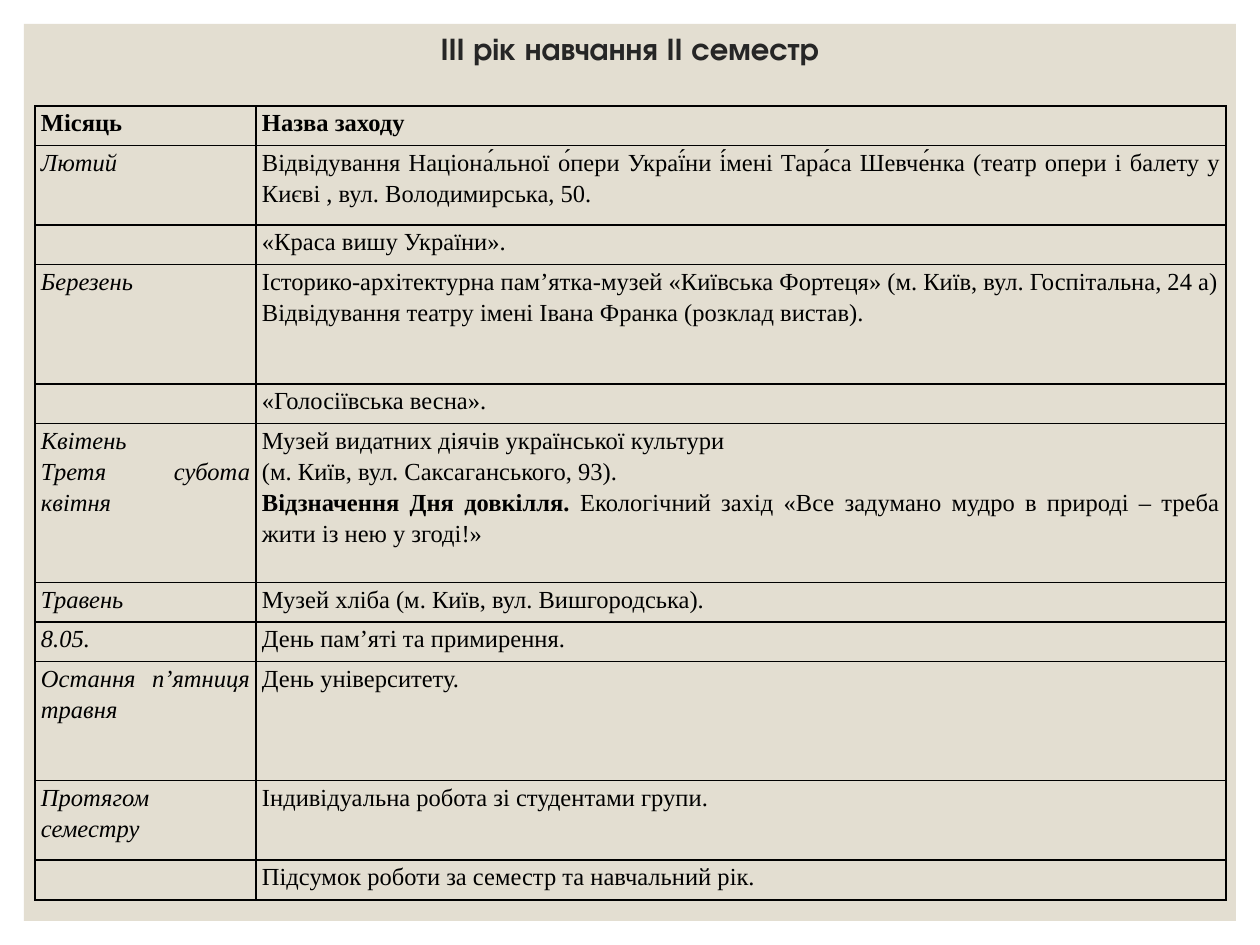
from lxml.etree import fromstring
from pptx import Presentation
from pptx.dml.color import RGBColor as Rgb
from pptx.enum.shapes import MSO_SHAPE as Shape
from pptx.enum.text import MSO_ANCHOR as Anchor, PP_ALIGN as Align
from pptx.util import Pt

SCALE = 914400 / 126
COLORS = {"panel": "E3DED1", "title": "262626", "ink": "000000"}
FONTS = {"title": "TeX Gyre Adventor", "body": "Times New Roman"}
NS = "http://schemas.openxmlformats.org/drawingml/2006/main"
LEAD = "Відзначення Дня довкілля. "

# Height in lines, month paragraphs, event paragraphs
ROWS = [
    (1, ["Місяць"], ["Назва заходу"]),
    (2, ["Лютий"], ["Відвідування Націона́льної о́пери Украї́ни і́мені Тара́са Шевче́нка "
                    "(театр опери і балету у Києві , вул. Володимирська, 50."]),
    (1, [], ["«Краса вишу України»."]),
    (3, ["Березень"], ["Історико-архітектурна пам’ятка-музей «Київська Фортеця» "
                       "(м. Київ, вул. Госпітальна, 24 а)",
                       "Відвідування театру імені Івана Франка (розклад вистав)."]),
    (1, [], ["«Голосіївська весна»."]),
    (4, ["Квітень", "Третя субота квітня"],
     ["Музей видатних діячів української культури",
      "(м. Київ, вул. Саксаганського, 93).",
      LEAD + "Екологічний захід «Все задумано мудро в природі – "
      "треба жити із нею у згоді!»"]),
    (1, ["Травень"], ["Музей хліба (м. Київ, вул. Вишгородська)."]),
    (1, ["8.05."], ["День пам’яті та примирення."]),
    (3, ["Остання п’ятниця травня"], ["День університету."]),
    (2, ["Протягом семестру"], ["Індивідуальна робота зі студентами групи."]),
    (1, [], ["Підсумок роботи за семестр та навчальний рік."]),
]


def px(n):
    return round(n * SCALE)


def box(*dims):
    return [px(n) for n in dims]


def assign(obj, vals):
    for key, val in vals.items():
        setattr(obj, key, val)


def add_run(para, text, face, size, color, **style):
    run = para.add_run()
    run.text = text
    assign(run.font, {"name": FONTS[face], "size": Pt(size), **style})
    run.font.color.rgb = Rgb.from_string(COLORS[color])


def add_panel(slide):
    panel = slide.shapes.add_shape(Shape.RECTANGLE, *box(24, 24, 1212, 897))
    panel.shadow.inherit = False
    panel.fill.solid()
    panel.fill.fore_color.rgb = Rgb.from_string(COLORS["panel"])
    panel.line.fill.background()


def add_title(slide, text):
    frame = slide.shapes.add_textbox(*box(101, 26, 1058, 49)).text_frame
    assign(frame, {"word_wrap": True, "vertical_anchor": Anchor.MIDDLE})
    para = frame.paragraphs[0]
    assign(para, {"alignment": Align.CENTER, "line_spacing": 0.9})
    add_run(para, text, "title", 18, "title", bold=True)


def add_edges(cell):
    """Draw a thin line on all four sides of a cell."""
    props = cell._tc.get_or_add_tcPr()
    for i, side in enumerate("LRTB"):
        props.insert(i, fromstring(
            f'<a:ln{side} xmlns:a="{NS}" w="{Pt(1)}"><a:solidFill>'
            f'<a:srgbClr val="{COLORS["ink"]}"/></a:solidFill></a:ln{side}>'))


def fill_cell(cell, lines, **style):
    assign(cell, {"margin_left": px(6), "margin_right": px(6),
                  "margin_top": 0, "margin_bottom": 0})
    cell.fill.background()
    add_edges(cell)
    frame = cell.text_frame
    for i, text in enumerate(lines or [""]):
        para = frame.add_paragraph() if i else frame.paragraphs[0]
        assign(para, {"alignment": Align.JUSTIFY, "line_spacing": 1.15})
        if text.startswith(LEAD):
            add_run(para, LEAD, "body", 14, "ink", bold=True)
            text = text.removeprefix(LEAD)
        if text:
            add_run(para, text, "body", 14, "ink", **style)
        else:  # keeps an empty row from growing
            para._p.get_or_add_endParaRPr().set("sz", "1400")


def add_plan(slide):
    high = 794
    table = slide.shapes.add_table(len(ROWS), 2, *box(35, 106, 1191, high)).table
    assign(table, {"first_row": False, "horz_banding": False})
    for col, wide in zip(table.columns, (221, 970)):
        col.width = px(wide)
    total = sum(row[0] for row in ROWS)
    for i, (units, month, events) in enumerate(ROWS):
        table.rows[i].height = px(high * units / total)
        head = i == 0
        fill_cell(table.cell(i, 0), month, bold=head, italic=not head)
        fill_cell(table.cell(i, 1), events, bold=head, italic=False)


def main():
    prs = Presentation()
    assign(prs, {"slide_width": px(1260), "slide_height": px(945)})
    slide = prs.slides.add_slide(prs.slide_layouts[6])
    add_panel(slide)
    add_title(slide, "ІІІ рік навчання ІІ семестр")
    add_plan(slide)
    prs.save("out.pptx")


if __name__ == "__main__":
    main()
